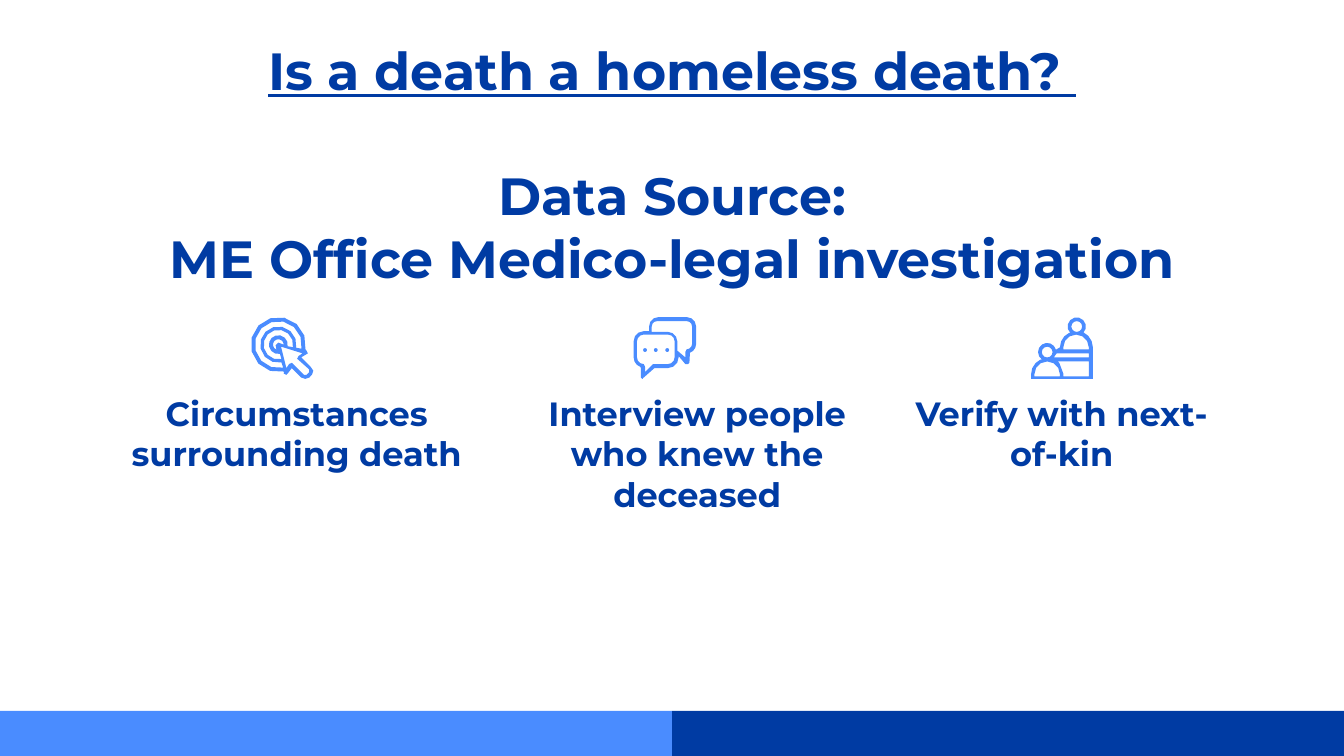
from math import ceil, cos, radians, sin

from pptx import Presentation
from pptx.dml.color import RGBColor
from pptx.enum.shapes import MSO_SHAPE
from pptx.enum.text import MSO_ANCHOR, PP_ALIGN
from pptx.util import Pt

NAVY = RGBColor(0x00, 0x3B, 0xA3)
BLUE = RGBColor(0x4A, 0x8C, 0xFF)
FONT = "Montserrat"
UNIT = 0.72
ICON_TOP = 169.9
LABEL_TOP = 203.3


def arc(cx, cy, radius, start, end):
    steps = ceil(abs(end - start) / 30)
    angles = [radians(start + (end - start) * i / steps) for i in range(steps + 1)]
    return [(cx + radius * cos(a), cy + radius * sin(a)) for a in angles]


def circle(cx, cy, radius):
    return arc(cx, cy, radius, 0, 360)


def target_icon():
    def ring(outer, inner):
        return arc(20, 20.5, outer, 78, 370) + arc(20, 20.5, inner, 370, 80)

    outline = arc(20, 20.5, 20.5, 78, 370) + [
        (41, 25), (42, 27), (37, 30), (44, 37), (46, 40), (45, 43), (43, 45),
        (40, 46), (37, 45), (30, 38), (27, 42), (26, 43), (24, 42)]
    center = arc(20, 20.5, 4, 110, 360) + [(20, 19), (18, 21)]
    pointer = [(22, 22), (38, 27), (35, 29), (34, 31), (43, 39), (43, 41),
               (41, 43), (39, 43), (31, 35), (30, 34), (28, 35), (26, 38)]
    return [[outline, ring(17.5, 13.5), ring(11, 7), center, pointer]]


def chat_icon():
    outline = (arc(39, 7, 7, -90, 0) + arc(39, 20, 7, 0, 70)
               + [(41, 34), (40, 35), (38, 35), (33, 29)]
               + arc(25, 30, 8, 0, 90)
               + [(15, 38), (7, 45), (6, 46), (5, 45), (5, 38)]
               + arc(7, 30, 7.5, 110, 180) + arc(7, 18, 7.5, 180, 270)
               + [(11, 10.5)] + arc(18, 7, 7, 180, 270))
    back = (arc(39, 7, 4, -90, 0) + arc(39, 20, 4, 0, 90)
            + [(38, 26), (38, 30), (32, 25)]
            + arc(25, 18, 7, 0, -90) + [(13, 11)] + arc(17, 7, 4, 180, 270))
    front = (arc(25, 18, 5, -90, 0) + arc(25, 30, 5, 0, 90)
             + [(14, 35), (8, 41), (8, 37)]
             + arc(7, 30, 5, 90, 180) + arc(7, 18, 5, 180, 270))
    dots = [[circle(x, 24.5, 1.4)] for x in (8, 16, 24.5)]
    return [[outline, back, front]] + dots


def family_icon():
    outline = (arc(34, 7, 6.8, 135, 405) + arc(33.5, 22.5, 12.5, -65, 0)
               + [(46, 46), (0, 46)]
               + arc(12, 42.5, 12, 180, 245) + arc(12, 26, 6.8, 125, 345)
               + arc(33.5, 22.5, 12, 180, 245))
    adult = arc(33.5, 22.5, 9.5, 180, 360) + [(43, 24), (24, 24)]
    child = arc(12, 42.5, 9.5, 180, 360) + [(21.5, 44), (2.5, 44)]
    band = [(43, 27), (43, 30), (17, 30), (19, 27)]
    base = [(43, 33), (43, 44), (24, 44), (24, 42), (21, 34), (20, 33)]
    return [[outline, circle(34, 7, 4), circle(12, 26, 4), adult, child, band, base]]


def paint(sp, color):
    sp.shadow.inherit = False
    sp.fill.solid()
    sp.fill.fore_color.rgb = color
    sp.line.fill.background()


def add_bar(s, left, color):
    sp = s.shapes.add_shape(MSO_SHAPE.RECTANGLE, Pt(left), Pt(380.9), Pt(360), Pt(24.1))
    paint(sp, color)


def add_outline(s, left, contours):
    def to_emu(points):
        return [(Pt(left + x * UNIT), Pt(ICON_TOP + y * UNIT)) for x, y in points]

    first, *rest = [to_emu(points) for points in contours]
    builder = s.shapes.build_freeform(*first[0])
    builder.add_line_segments(first[1:])
    for points in rest:
        builder.move_to(*points[0])
        builder.add_line_segments(points[1:])
    paint(builder.convert_to_shape(), BLUE)


def add_text(s, box, lines, size, after=0):
    tf = s.shapes.add_textbox(*[Pt(v) for v in box]).text_frame
    margins = {f"margin_{side}": Pt(7.2) for side in ("left", "top", "right", "bottom")}
    for name, value in {"word_wrap": True, "vertical_anchor": MSO_ANCHOR.TOP, **margins}.items():
        setattr(tf, name, value)
    for i, (text, underline, before) in enumerate(lines):
        p = tf.add_paragraph() if i else tf.paragraphs[0]
        spacing = {"alignment": PP_ALIGN.CENTER, "space_before": Pt(before), "space_after": Pt(after)}
        for name, value in spacing.items():
            setattr(p, name, value)
        r = p.add_run()
        r.text = text
        r.font.color.rgb = NAVY
        font = {"name": FONT, "size": Pt(size), "bold": True, "underline": underline}
        for name, value in font.items():
            setattr(r.font, name, value)


def main():
    prs = Presentation()
    prs.slide_width, prs.slide_height = Pt(720), Pt(405)
    s = prs.slides.add_slide(prs.slide_layouts[6])
    add_bar(s, 360, NAVY)
    add_bar(s, 0, BLUE)
    add_text(s, (56.5, 13.3, 607, 84.2), [
        ("Is a death a homeless death? ", True, 0),
        ("Data Source:", False, 33.4),
        ("ME Office Medico-legal investigation", False, 0),
    ], 28)
    steps = [
        ("Circumstances surrounding death", 62.1, 193.7, 134.7, target_icon()),
        ("Interview people who knew the deceased", 270.9, 205.2, 339.8, chat_icon()),
        ("Verify with next-of-kin", 479.9, 177.8, 552.4, family_icon()),
    ]
    for label, left, width, icon_left, outlines in steps:
        add_text(s, (left, LABEL_TOP, width, 32.4), [(label, False, 0)], 18, 16)
        for contours in outlines:
            add_outline(s, icon_left, contours)
    prs.save("out.pptx")


if __name__ == "__main__":
    main()
